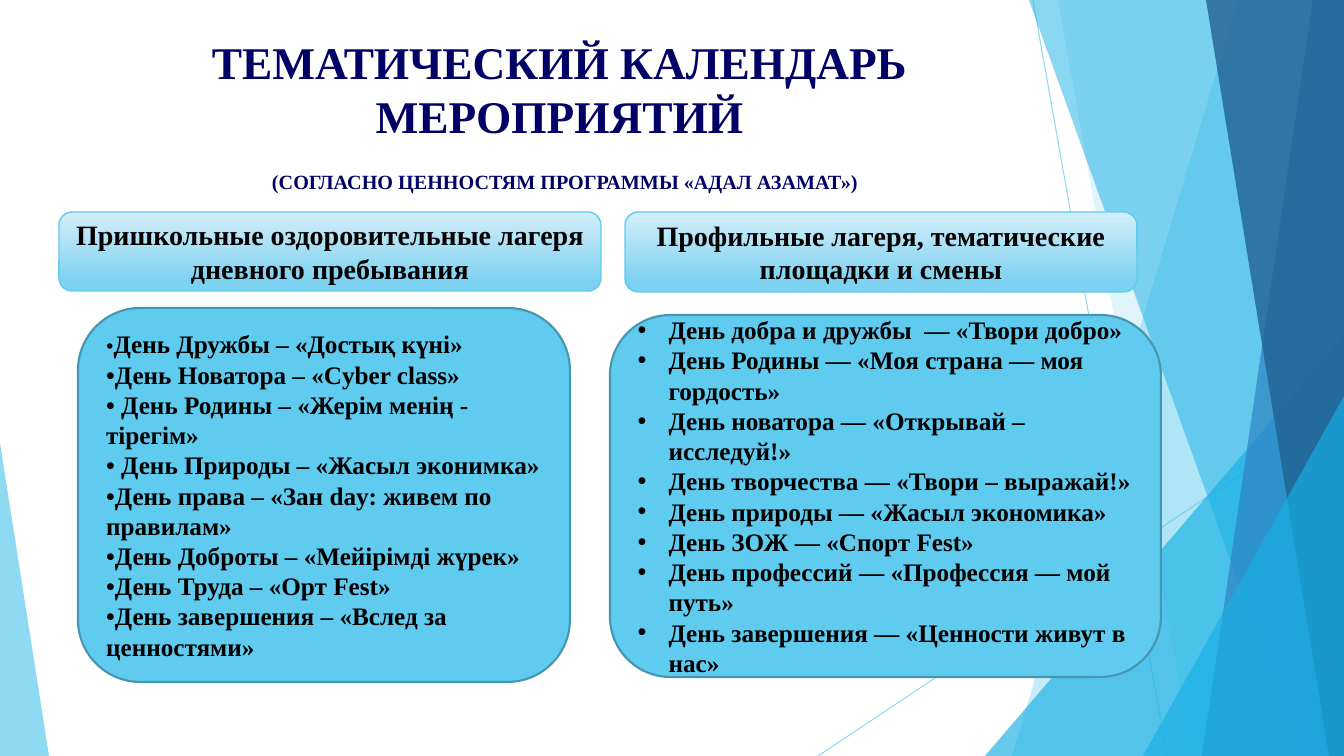
"""Build the slide with the thematic calendar of camp events."""
import pptx
import pptx.dml.color
import pptx.enum.shapes
import pptx.enum.text
import pptx.oxml
import pptx.oxml.ns
import pptx.util
from lxml import etree

SCALE = 914400 / 100.8
SLIDE_SIZE = (1344, 756)
SERIF = "Times New Roman"
MARKER_FONT = "Cabin"
COLORS = {
    "navy": "000066", "black": "000000", "sky": "5FCBEF", "cyan": "17B0E4",
    "blue": "2E83C3", "deep": "226292", "edge": "4696B1",
    "pale": "D4EEF9", "soft": "7DD1F1",
}

THIN_LINES = [((1033, 0), (1167, 756)), ((1344, 406), (818, 756))]
FACETS = [
    ("free", [(1238, 0), (1344, 0), (1344, 756), (1012, 756)], "sky", 36),
    ("free", [(1058, 0), (1344, 0), (1344, 756), (1192, 756)], "sky", 20),
    ("triangle", (985, 336, 359, 420), 1, "cyan", 66),
    ("free", [(1029, 0), (1344, 0), (1344, 756), (1301, 756)], "cyan", 50),
    ("free", [(1313, 0), (1344, 0), (1344, 756), (1202, 756)], "blue", 70),
    ("free", [(1206, 0), (1344, 0), (1344, 756), (1329, 756)], "deep", 80),
    ("triangle", (1143, 396, 201, 360), 1, "cyan", 66),
    ("triangle", (0, 443, 49, 313), 0, "sky", 70),
]

TITLE_BOX = (71, 29, 977, 145)
TITLE = "ТЕМАТИЧЕСКИЙ КАЛЕНДАРЬ МЕРОПРИЯТИЙ"
SUBTITLE = "(СОГЛАСНО ЦЕННОСТЯМ ПРОГРАММЫ «АДАЛ АЗАМАТ»)"
HEADINGS = [
    ((59, 212, 542, 79), "Пришкольные оздоровительные лагеря дневного пребывания"),
    ((625, 212, 512, 80), "Профильные лагеря, тематические площадки и смены"),
]
DAY_CAMP_BOX = (78, 308, 492, 374)
DAY_CAMP_EVENTS = [
    "День Дружбы – «Достық күні»",
    "•День Новатора – «Cyber class»",
    "• День Родины – «Жерім менің - тірегім»",
    "• День Природы – «Жасыл эконимка»",
    "•День права – «Зан day: живем по правилам»",
    "•День Доброты – «Мейірімді жүрек»",
    "•День Труда – «Орт Fest»",
    "•День завершения – «Вслед за ценностями»",
]
PROFILE_CAMP_BOX = (610, 315, 551, 362)
PROFILE_CAMP_EVENTS = [
    "День добра и дружбы  — «Твори добро»",
    "День Родины — «Моя страна — моя гордость»",
    "День новатора — «Открывай – исследуй!»",
    "День творчества — «Твори – выражай!»",
    "День природы — «Жасыл экономика»",
    "День ЗОЖ — «Спорт Fest»",
    "День профессий — «Профессия — мой путь»",
    "День завершения — «Ценности живут в нас»",
]
BULLET_INDENT = 31

SHAPES = pptx.enum.shapes.MSO_SHAPE
ALIGN = pptx.enum.text.PP_ALIGN


def px(*lengths):
    return [pptx.util.Emu(round(length * SCALE)) for length in lengths]


def rgb(name):
    return pptx.dml.color.RGBColor.from_string(COLORS[name])


def set_opacity(shape, percent):
    color = shape._element.xpath(".//p:spPr//a:srgbClr")[0]
    etree.SubElement(color, pptx.oxml.ns.qn("a:alpha")).set("val", str(percent * 1000))


def add_thin_line(slide, start, end):
    line = slide.shapes.add_connector(
        pptx.enum.shapes.MSO_CONNECTOR.STRAIGHT, *px(*start, *end))
    line.line.color.rgb = rgb("sky")
    line.line.width = pptx.util.Pt(0.75)
    set_opacity(line, 70)
    etree.SubElement(line._element.spPr, pptx.oxml.ns.qn("a:effectLst"))


def add_facet(slide, kind, geometry, *details):
    *tip, color, opacity = details
    if kind == "free":
        builder = slide.shapes.build_freeform(*geometry[0], scale=SCALE)
        builder.add_line_segments(geometry[1:], close=True)
        shape = builder.convert_to_shape()
    else:
        shape = slide.shapes.add_shape(SHAPES.ISOSCELES_TRIANGLE, *px(*geometry))
        shape.adjustments[0] = tip[0]
    shape.fill.solid()
    shape.fill.fore_color.rgb = rgb(color)
    set_opacity(shape, opacity)
    shape.line.fill.background()
    shape.shadow.inherit = False


def add_panel(slide, box, edge, width, gradient=None):
    panel = slide.shapes.add_shape(SHAPES.ROUNDED_RECTANGLE, *px(*box))
    if gradient:
        panel.fill.gradient()
        panel.fill.gradient_angle = 270
        for stop, (position, color) in zip(panel.fill.gradient_stops, gradient):
            stop.position = position
            stop.color.rgb = rgb(color)
    else:
        panel.fill.solid()
        panel.fill.fore_color.rgb = rgb("sky")
    panel.line.color.rgb = rgb(edge)
    panel.line.width = pptx.util.Pt(width)
    panel.shadow.inherit = False
    panel.text_frame.word_wrap = True
    panel.text_frame.vertical_anchor = pptx.enum.text.MSO_ANCHOR.MIDDLE
    return panel.text_frame


def add_bullet(paragraph):
    properties = paragraph._p.get_or_add_pPr()
    indent = px(BULLET_INDENT)[0]
    properties.set("marL", str(indent))
    properties.set("indent", str(-indent))
    font = etree.SubElement(properties, pptx.oxml.ns.qn("a:buFont"))
    font.set("typeface", "Arial")
    etree.SubElement(properties, pptx.oxml.ns.qn("a:buChar")).set("char", "•")


def write(paragraph, text, size=18, font=SERIF, color="black", align=ALIGN.LEFT, before=None):
    paragraph.alignment = align
    if before:
        paragraph.space_before = pptx.util.Pt(before)
    run = paragraph.add_run()
    run.text = text
    run.font.size = pptx.util.Pt(size)
    run.font.name = font
    run.font.bold = True
    run.font.color.rgb = rgb(color)


def next_paragraph(frame, index):
    return frame.add_paragraph() if index else frame.paragraphs[0]


def main():
    presentation = pptx.Presentation()
    presentation.slide_width, presentation.slide_height = px(*SLIDE_SIZE)
    slide = presentation.slides.add_slide(presentation.slide_layouts[6])

    for start, end in THIN_LINES:
        add_thin_line(slide, start, end)
    for facet in FACETS:
        add_facet(slide, *facet)

    title = slide.shapes.add_textbox(*px(*TITLE_BOX)).text_frame
    title.word_wrap = True
    write(title.paragraphs[0], TITLE, size=32.4, color="navy", align=ALIGN.CENTER)
    subtitle = title.add_paragraph()
    write(subtitle, SUBTITLE, size=14.4, color="navy", align=ALIGN.CENTER, before=19)
    subtitle._p.get_or_add_pPr().set("marL", str(px(11)[0]))

    for box, heading in HEADINGS:
        frame = add_panel(slide, box, "sky", 1, gradient=[(0, "pale"), (0.88, "soft")])
        write(frame.paragraphs[0], heading, size=20, align=ALIGN.CENTER)

    day_camp = add_panel(slide, DAY_CAMP_BOX, "edge", 1.5)
    write(day_camp.paragraphs[0], "•", font=MARKER_FONT)
    for index, event in enumerate(DAY_CAMP_EVENTS):
        write(next_paragraph(day_camp, index), event)

    profile_camp = add_panel(slide, PROFILE_CAMP_BOX, "edge", 1.5)
    for index, event in enumerate(PROFILE_CAMP_EVENTS):
        paragraph = next_paragraph(profile_camp, index)
        add_bullet(paragraph)
        write(paragraph, event)

    presentation.save("out.pptx")


if __name__ == "__main__":
    main()
